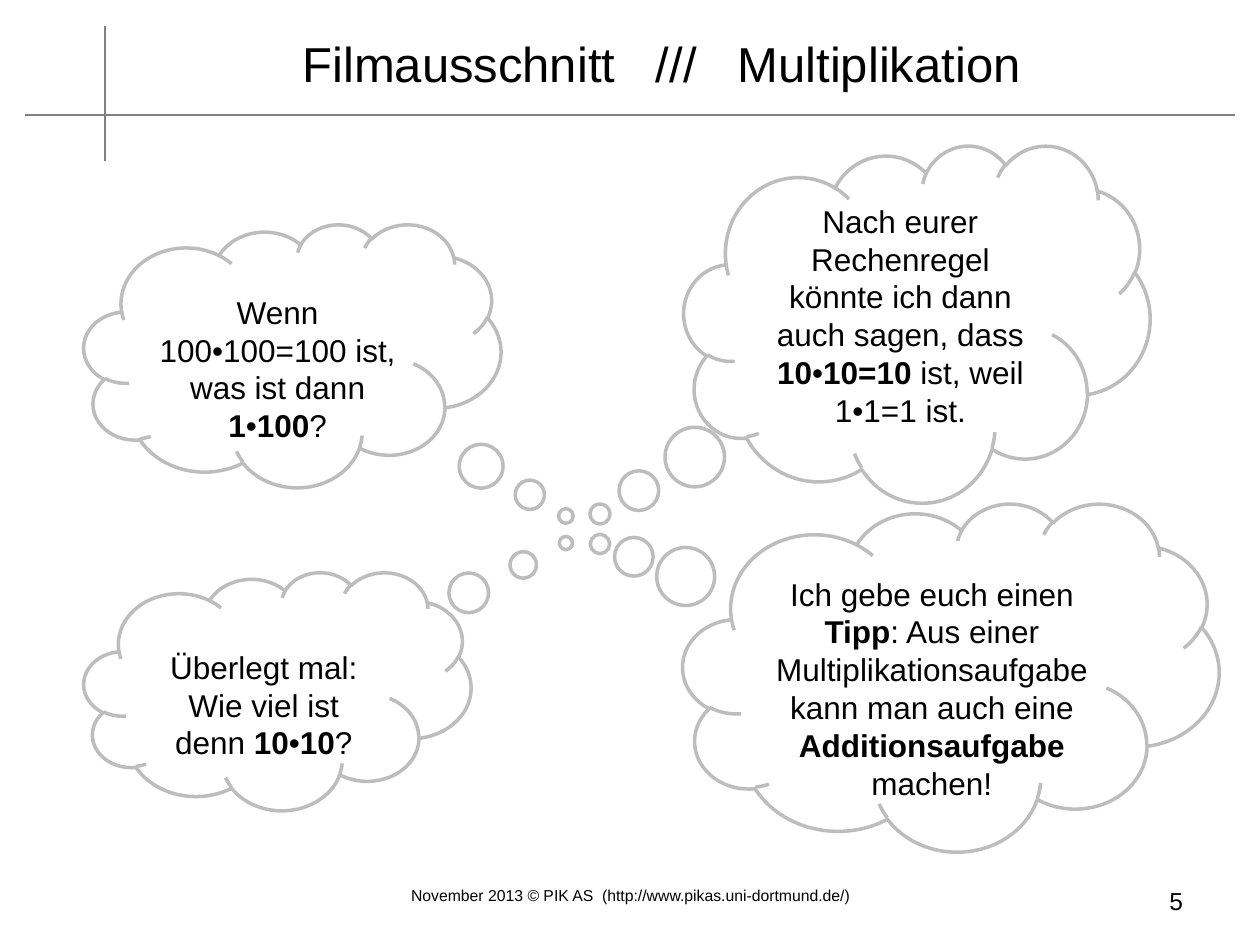
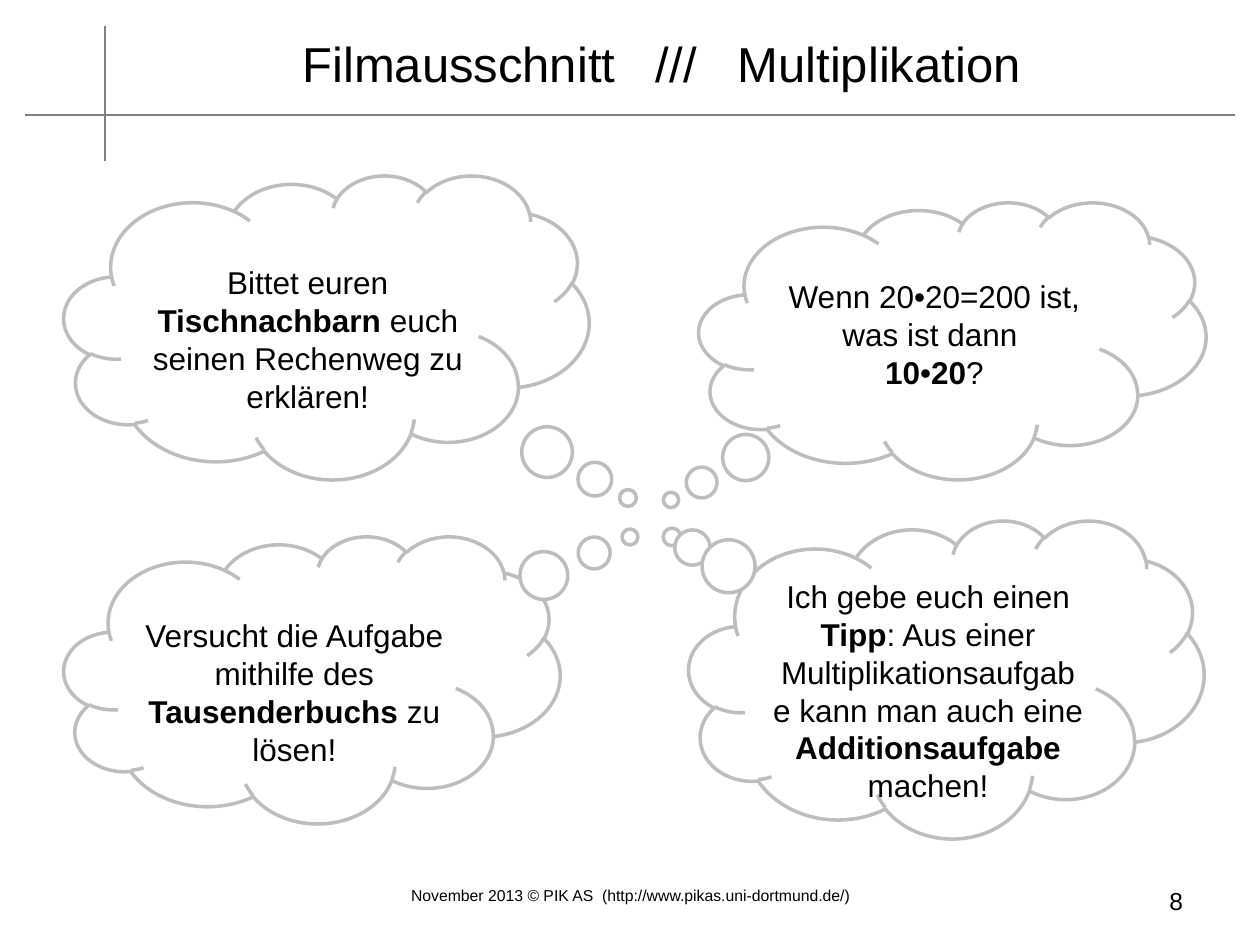
from lxml import etree
from pptx import Presentation
from pptx import util as u
from pptx.dml.color import RGBColor
from pptx.enum import shapes, text
from pptx.oxml.ns import qn

TITLE = ("Filmausschnitt", "///", "Multiplikation")
FOOTER = ("November 2013 © PIK AS", "(http://www.pikas.uni-dortmund.de/)")
TIP = ("Ich gebe euch einen *Tipp*: Aus einer Multiplikationsaufgabe "
       "kann man auch eine *Additionsaufgabe *machen!")
LOWERED, CENTERED = 38, 0
SLIDES = [
    ("5", [
        ("Überlegt mal: Wie viel ist denn *10*•*10*?",
         (84, 572, 387, 238), (566, 543), LOWERED),
        (TIP, (683, 503, 536, 348), (600, 544), LOWERED),
        ("Wenn 100•100=100 ist, was ist dann *1*•*100*?",
         (84, 224, 417, 263), (566, 516), LOWERED),
        ("Nach eurer Rechenregel könnte ich dann auch sagen, dass "
         "*10*•*10=10 *ist, weil 1•1=1 ist.",
         (684, 145, 466, 357), (600, 514), CENTERED),
    ]),
    ("8", [
        ("Versucht die Aufgabe mithilfe des *Tausenderbuchs* zu lösen!",
         (64, 536, 496, 287), (630, 537), LOWERED),
        ("Bittet euren *Tischnachbarn* euch seinen Rechenweg zu erklären!",
         (64, 175, 525, 304), (628, 498), LOWERED),
        (TIP, (689, 520, 515, 318), (672, 537), LOWERED),
        ("Wenn 20•20=200 ist, was ist dann \n*10*•*20*?",
         (699, 202, 507, 277), (671, 500), CENTERED),
    ]),
]

BLACK = RGBColor(0x00, 0x00, 0x00)
WHITE = RGBColor(0xFF, 0xFF, 0xFF)
CLOUD_GRAY = RGBColor(0xBD, 0xBD, 0xBD)
RULE_GRAY = RGBColor(0x80, 0x80, 0x80)
FONT = "Arial"
PX_PER_INCH = 126
PAGE = (1260, 945)
RULES = [(25, 115, 1235, 115), (105, 26, 105, 161)]
TITLE_BOX = (126, 21, 1071, 84)
NUMBER_BOX = (907, 880, 289, 65)
FOOTER_BOX = (323, 880, 615, 65)
INSET_X, INSET_Y = 13, 6
TITLE_GAP, FOOTER_GAP = 15.6, 2.5


def px(value):
    return round(value * u.Inches(1) / PX_PER_INCH)


def apply(target, **values):
    for name, value in values.items():
        setattr(target, name, value)


def prepare_frame(shape, anchor, extra_top=0):
    apply(shape.text_frame, word_wrap=True, vertical_anchor=anchor,
          margin_left=px(INSET_X), margin_right=px(INSET_X),
          margin_top=px(INSET_Y + extra_top), margin_bottom=px(INSET_Y))
    return shape.text_frame.paragraphs[0]


def add_run(paragraph, words, size, bold=False):
    run = paragraph.add_run()
    run.text = words
    apply(run.font, name=FONT, size=u.Pt(size), bold=bold)
    run.font.color.rgb = BLACK
    return run


def add_label(slide, parts, box, size, align, anchor, gap=0):
    shape = slide.shapes.add_textbox(*map(px, box))
    paragraph = prepare_frame(shape, anchor)
    paragraph.alignment = align
    for index, part in enumerate(parts):
        if index:
            space = add_run(paragraph, " ", size)
            space._r.get_or_add_rPr().set("spc", str(round(gap * 100)))
        add_run(paragraph, part, size)


def add_rule(slide, ends):
    rule = slide.shapes.add_connector(
        shapes.MSO_CONNECTOR.STRAIGHT, *map(px, ends))
    rule.line.color.rgb = RULE_GRAY
    rule.line.width = u.Pt(1.25)
    etree.SubElement(rule._element.spPr, qn("a:effectLst"))


def add_cloud(slide, words, box, tip, extra_top):
    cloud = slide.shapes.add_shape(
        shapes.MSO_SHAPE.CLOUD_CALLOUT, *map(px, box))
    left, top, width, height = box
    cloud.adjustments[0] = (tip[0] - left) / width - 0.5
    cloud.adjustments[1] = (tip[1] - top) / height - 0.5
    cloud.shadow.inherit = False
    cloud.fill.solid()
    cloud.fill.fore_color.rgb = WHITE
    cloud.line.color.rgb = CLOUD_GRAY
    cloud.line.width = u.Pt(2)
    paragraph = prepare_frame(cloud, text.MSO_ANCHOR.MIDDLE, extra_top)
    paragraph.alignment = text.PP_ALIGN.CENTER
    for index, part in enumerate(words.split("*")):
        for row, line in enumerate(part.split("\n")):
            if row:
                paragraph.add_line_break()
            if line:
                add_run(paragraph, line, 18, bold=index % 2 == 1)


def build_slide(presentation, number, clouds):
    slide = presentation.slides.add_slide(presentation.slide_layouts[6])
    align, anchor = text.PP_ALIGN, text.MSO_ANCHOR
    for ends in RULES:
        add_rule(slide, ends)
    add_label(slide, TITLE, TITLE_BOX, 28, align.CENTER, anchor.MIDDLE, TITLE_GAP)
    add_label(slide, [number], NUMBER_BOX, 14, align.RIGHT, anchor.TOP)
    for cloud in clouds:
        add_cloud(slide, *cloud)
    add_label(slide, FOOTER, FOOTER_BOX, 9, align.CENTER, anchor.TOP, FOOTER_GAP)


def main():
    presentation = Presentation()
    apply(presentation, slide_width=px(PAGE[0]), slide_height=px(PAGE[1]))
    for number, clouds in SLIDES:
        build_slide(presentation, number, clouds)
    presentation.save("out.pptx")


if __name__ == "__main__":
    main()
